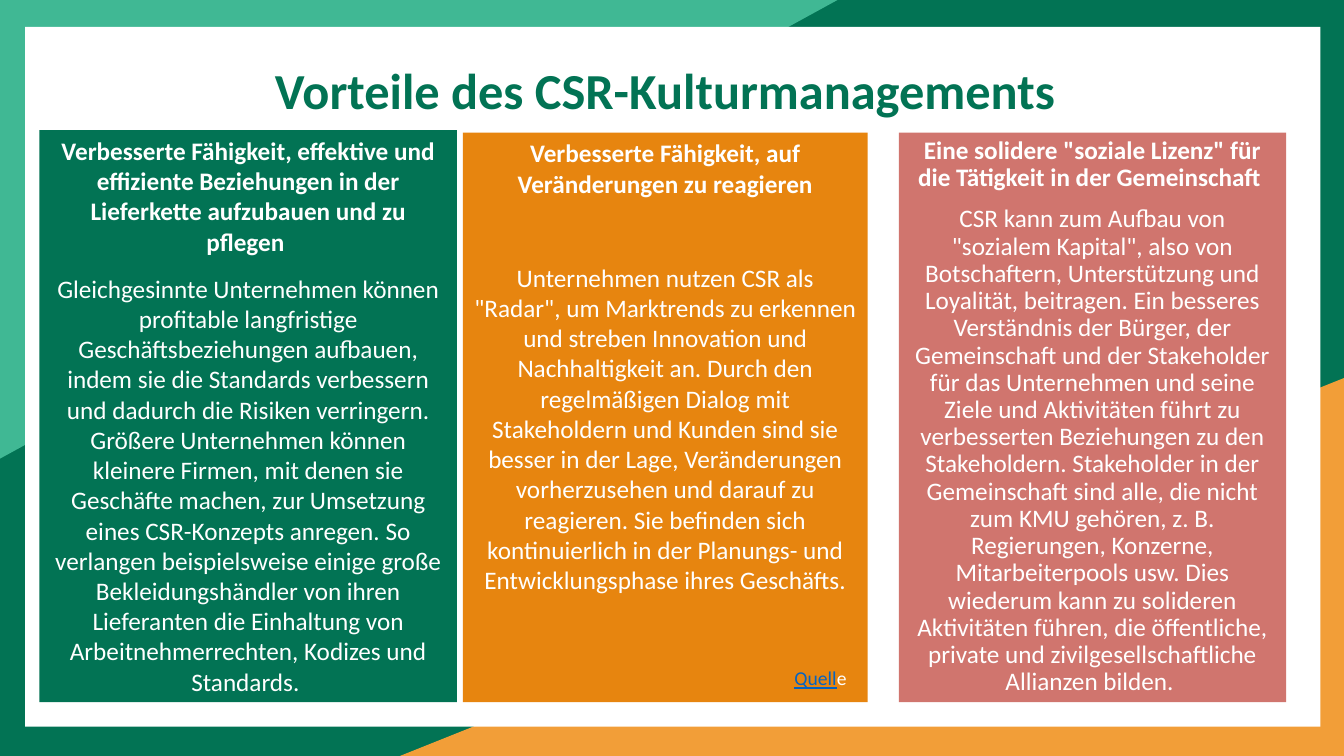
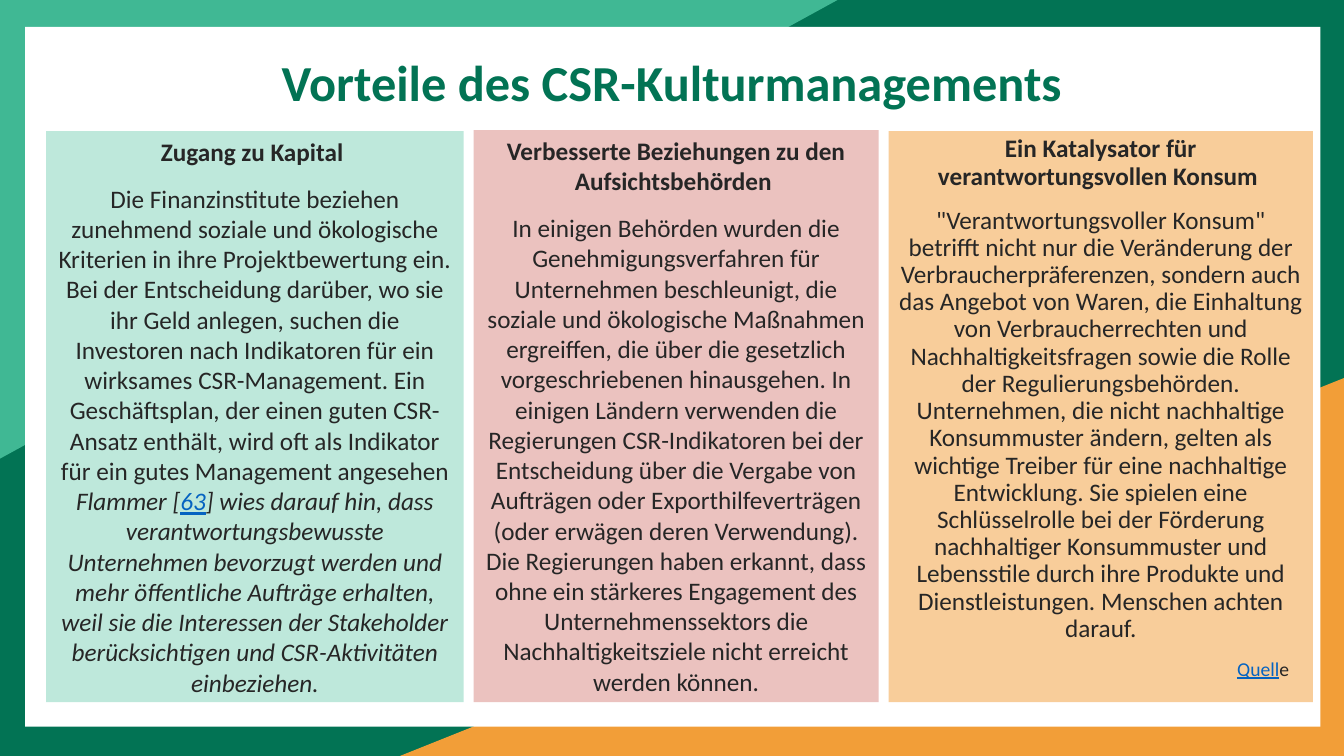
from pptx import Presentation
from pptx.dml.color import RGBColor
from pptx.enum.shapes import MSO_SHAPE
from pptx.enum.text import MSO_ANCHOR, PP_ALIGN
from pptx.util import Inches, Pt

GREEN = RGBColor(0x02, 0x73, 0x54)
MINT = RGBColor(0x40, 0xB8, 0x94)
ORANGE = RGBColor(0xF2, 0x9E, 0x38)
AMBER = RGBColor(0xE7, 0x85, 0x0F)
ROSE = RGBColor(0xD0, 0x75, 0x6E)
PALE_MINT = RGBColor(0xBE, 0xE8, 0xDB)
PALE_ROSE = RGBColor(0xEB, 0xC2, 0xBF)
PALE_ORANGE = RGBColor(0xF8, 0xCD, 0x9A)
WHITE = RGBColor(0xFF, 0xFF, 0xFF)
INK = RGBColor(0x26, 0x26, 0x26)
LINK = RGBColor(0x05, 0x63, 0xC1)

FONT = "Calibri"
COLUMNS, ROWS = 160, 90
PANEL_BOTTOM = 83.6
TITLE = "Vorteile des CSR-Kulturmanagements"


class Deck:
    """Holds the style and the current page; lengths are grid columns and rows."""

    def __init__(self):
        self.deck = Presentation()
        self.deck.slide_width = Inches(13.33)
        self.deck.slide_height = Inches(7.5)
        self.page = None

    def area(self, left, top, width, height):
        across = self.deck.slide_width / COLUMNS
        down = self.deck.slide_height / ROWS
        return (round(left * across), round(top * down),
                round(width * across), round(height * down))

    def add_page(self, title_left, title_top):
        self.page = self.deck.slides.add_slide(self.deck.slide_layouts[6])
        self.page.background.fill.solid()
        self.page.background.fill.fore_color.rgb = GREEN
        self.corner((47.6, 45, 112.4, 45), ORANGE)
        self.corner((0, 0, 99.7, 54.6), MINT, 180)
        self.shape(MSO_SHAPE.RECTANGLE, (3, 3.2, 154.2, 83.3), WHITE)
        frame = self.text_box((title_left, title_top, 137.8, 14.8))
        para = self.fill_para(frame.paragraphs[0], [TITLE], 36, GREEN,
                              bold=True)
        para.line_spacing = 1.2

    def shape(self, kind, cells, color):
        shape = self.page.shapes.add_shape(kind, *self.area(*cells))
        shape.shadow.inherit = False
        shape.fill.solid()
        shape.fill.fore_color.rgb = color
        shape.line.fill.background()
        return shape

    def corner(self, cells, color, rotation=0):
        triangle = self.shape(MSO_SHAPE.ISOSCELES_TRIANGLE, cells, color)
        triangle.adjustments[0] = 1
        triangle.rotation = rotation

    def text_box(self, cells):
        frame = self.page.shapes.add_textbox(*self.area(*cells)).text_frame
        frame.word_wrap = True
        return frame

    def fill_para(self, para, parts, size, color, bold=False, italic=False,
                  align=PP_ALIGN.CENTER, link=None):
        para.alignment = align
        para.font.name = FONT
        para.font.size = Pt(size)
        para.font.bold = bold
        para.font.italic = italic
        if link is None:
            para.font.color.rgb = color
        for part in parts:
            span = para.add_run()
            span.text = part
            if link is not None:
                span.font.color.rgb = LINK if part == link else color
                span.font.underline = part == link
        return para

    def panel(self, left, top, width, fill, ink, heading, body,
              gap=12, spacing=1.0):
        box = self.shape(MSO_SHAPE.RECTANGLE,
                         (left, top, width, PANEL_BOTTOM - top), fill)
        frame = box.text_frame
        frame.word_wrap = True
        frame.vertical_anchor = MSO_ANCHOR.TOP
        first = self.fill_para(frame.paragraphs[0], [heading], 18, ink,
                               bold=True)
        second = self.fill_para(frame.add_paragraph(), [body], 18, ink)
        second.space_before = Pt(gap)
        for para in (first, second):
            para.line_spacing = spacing
        return frame

    def source(self, left, top, width, ink, ending, align):
        frame = self.text_box((left, top, width, 4.1))
        self.fill_para(frame.paragraphs[0], ["Quell", ending], 14, ink,
                       align=align, link="Quell")

    def save(self):
        self.deck.save("out.pptx")


def relations_page(deck):
    deck.add_page(10.3, 5)
    deck.panel(
        55.1, 15.8, 48.2, AMBER, WHITE,
        "Verbesserte Fähigkeit, auf Veränderungen zu reagieren",
        "Unternehmen nutzen CSR als \"Radar\", um Marktrends zu erkennen und "
        "streben Innovation und Nachhaltigkeit an. Durch den regelmäßigen "
        "Dialog mit Stakeholdern und Kunden sind sie besser in der Lage, "
        "Veränderungen vorherzusehen und darauf zu reagieren. Sie befinden "
        "sich kontinuierlich in der Planungs- und Entwicklungsphase ihres "
        "Geschäfts.", gap=45.6)
    deck.panel(
        4.7, 15.5, 49.7, GREEN, WHITE,
        "Verbesserte Fähigkeit, effektive und effiziente Beziehungen in der "
        "Lieferkette aufzubauen und zu pflegen ",
        "Gleichgesinnte Unternehmen können profitable langfristige "
        "Geschäftsbeziehungen aufbauen, indem sie die Standards verbessern "
        "und dadurch die Risiken verringern. Größere Unternehmen können "
        "kleinere Firmen, mit denen sie Geschäfte machen, zur Umsetzung eines "
        "CSR-Konzepts anregen. So verlangen beispielsweise einige große "
        "Bekleidungshändler von ihren Lieferanten die Einhaltung von "
        "Arbeitnehmerrechten, Kodizes und Standards. ")
    deck.panel(
        107, 15.8, 46.1, ROSE, WHITE,
        "Eine solidere \"soziale Lizenz\" für die Tätigkeit in der "
        "Gemeinschaft ",
        "CSR kann zum Aufbau von \"sozialem Kapital\", also von Botschaftern, "
        "Unterstützung und Loyalität, beitragen. Ein besseres Verständnis der "
        "Bürger, der Gemeinschaft und der Stakeholder für das Unternehmen und "
        "seine Ziele und Aktivitäten führt zu verbesserten Beziehungen zu den "
        "Stakeholdern. Stakeholder in der Gemeinschaft sind alle, die nicht "
        "zum KMU gehören, z. B. Regierungen, Konzerne, Mitarbeiterpools usw. "
        "Dies wiederum kann zu solideren Aktivitäten führen, die öffentliche, "
        "private und zivilgesellschaftliche Allianzen bilden. ",
        gap=10, spacing=0.9)
    deck.source(84.1, 78.7, 27.7, WHITE, "e ", PP_ALIGN.CENTER)


def capital_page(deck):
    deck.add_page(11.1, 4.1)
    deck.panel(
        56.4, 15.5, 48.2, PALE_ROSE, INK,
        "Verbesserte Beziehungen zu den Aufsichtsbehörden ",
        "In einigen Behörden wurden die Genehmigungsverfahren für Unternehmen "
        "beschleunigt, die soziale und ökologische Maßnahmen ergreiffen, die "
        "über die gesetzlich vorgeschriebenen hinausgehen. In einigen Ländern "
        "verwenden die Regierungen CSR-Indikatoren bei der Entscheidung über "
        "die Vergabe von Aufträgen oder Exporthilfeverträgen (oder erwägen "
        "deren Verwendung). Die Regierungen haben erkannt, dass ohne ein "
        "stärkeres Engagement des Unternehmenssektors die "
        "Nachhaltigkeitsziele nicht erreicht werden können.")
    capital = deck.panel(
        5.5, 15.6, 49.7, PALE_MINT, INK, "Zugang zu Kapital ",
        "Die Finanzinstitute beziehen zunehmend soziale und ökologische "
        "Kriterien in ihre Projektbewertung ein. Bei der Entscheidung "
        "darüber, wo sie ihr Geld anlegen, suchen die Investoren nach "
        "Indikatoren für ein wirksames CSR-Management. Ein Geschäftsplan, der "
        "einen guten CSR-Ansatz enthält, wird oft als Indikator für ein gutes "
        "Management angesehen")
    deck.fill_para(
        capital.add_paragraph(),
        ["Flammer [", "63",
         "] wies darauf hin, dass verantwortungsbewusste Unternehmen "
         "bevorzugt werden und mehr öffentliche Aufträge erhalten, weil sie "
         "die Interessen der Stakeholder berücksichtigen und CSR-Aktivitäten "
         "einbeziehen."],
        18, INK, italic=True, link="63")
    deck.panel(
        105.8, 15.6, 50.5, PALE_ORANGE, INK,
        "Ein Katalysator für verantwortungsvollen Konsum ",
        "\"Verantwortungsvoller Konsum\" betrifft nicht nur die Veränderung "
        "der Verbraucherpräferenzen, sondern auch das Angebot von Waren, die "
        "Einhaltung von Verbraucherrechten und Nachhaltigkeitsfragen sowie "
        "die Rolle der Regulierungsbehörden. Unternehmen, die nicht "
        "nachhaltige Konsummuster ändern, gelten als wichtige Treiber für "
        "eine nachhaltige Entwicklung. Sie spielen eine Schlüsselrolle bei "
        "der Förderung nachhaltiger Konsummuster und Lebensstile durch ihre "
        "Produkte und Dienstleistungen. Menschen achten darauf.",
        spacing=0.9)
    deck.source(146.1, 77.6, 10.5, INK, "e", PP_ALIGN.LEFT)


def main():
    deck = Deck()
    relations_page(deck)
    capital_page(deck)
    deck.save()


if __name__ == "__main__":
    main()
